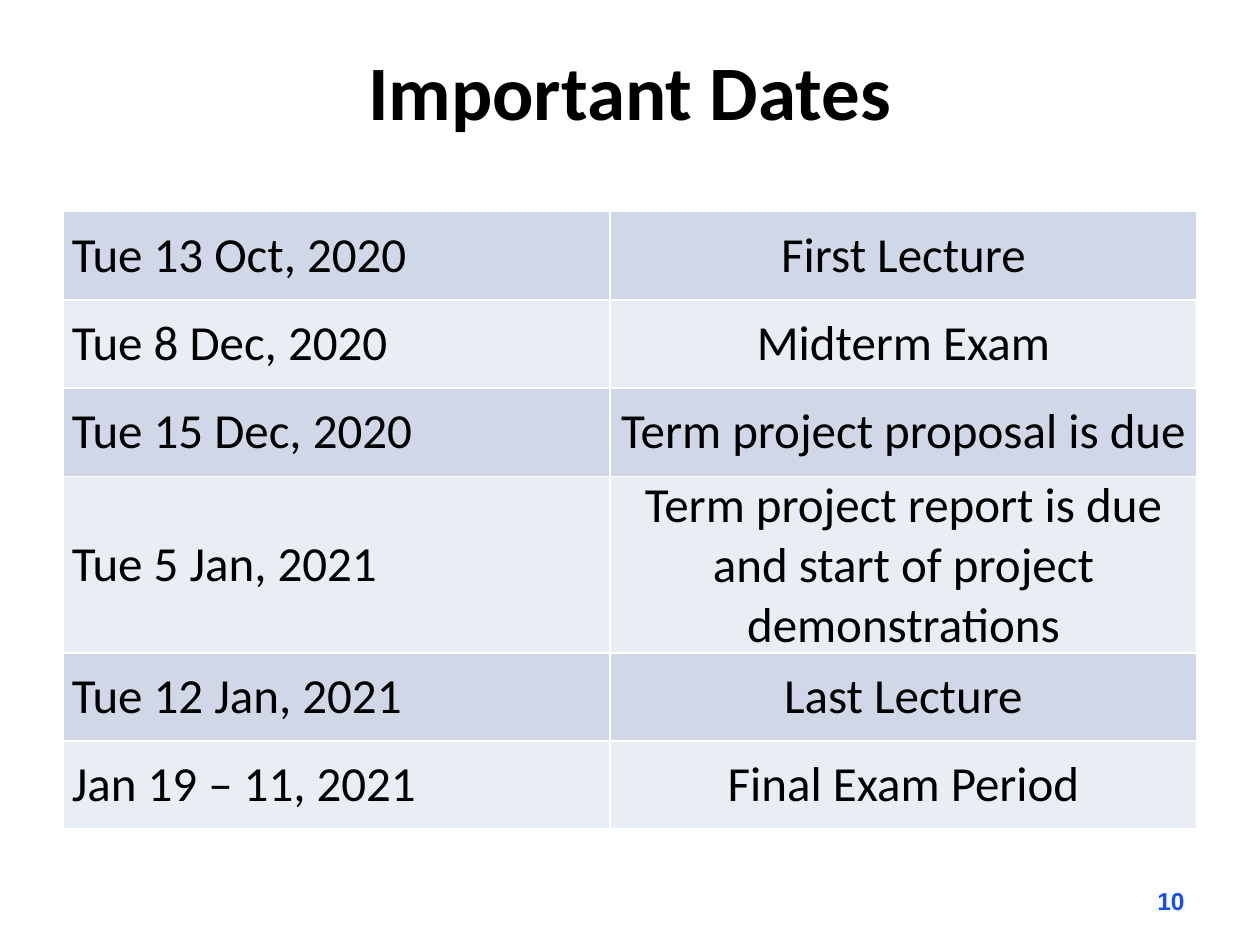
from lxml.etree import SubElement as Sub
from pptx import Presentation
from pptx.dml.color import RGBColor as RGB
from pptx.enum.text import MSO_ANCHOR as Anchor, PP_ALIGN as Align
from pptx.oxml.ns import qn
from pptx.util import Inches, Pt

BLACK = RGB(0x00, 0x00, 0x00)
BLUE = RGB(0x11, 0x4F, 0xFB)
BANDS = (RGB(0xD0, 0xD8, 0xE8), RGB(0xE9, 0xED, 0xF4))
WHITE = RGB(0xFF, 0xFF, 0xFF)

WIDE, HIGH = Inches(10), Inches(7.5)
EDGE = 0.05  # side margin, as a share of the width
COLS = (0.434, 0.466)  # shares of the width
ROW = Inches(0.7)

DATES = (
    ("Tue 13 Oct, 2020", "First Lecture"),
    ("Tue 8 Dec, 2020", "Midterm Exam"),
    ("Tue 15 Dec, 2020", "Term project proposal is due"),
    ("Tue 5 Jan, 2021",
     "Term project report is due and start of project demonstrations"),
    ("Tue 12 Jan, 2021", "Last Lecture"),
    ("Jan 19 – 11, 2021", "Final Exam Period"),
)


def across(share):
    return int(WIDE * share)


def down(share):
    return int(HIGH * share)


def put_text(frame, text, size=28, font="Calibri", color=BLACK,
             bold=False, align=Align.LEFT):
    """Write one formatted paragraph into a text frame."""
    frame.word_wrap = True
    para = frame.paragraphs[0]
    para.alignment = align
    run = para.add_run()
    run.text = text
    run.font.size = Pt(size)
    run.font.name = font
    run.font.bold = bold
    run.font.color.rgb = color


def add_box(slide, text, left, top, width, height, **look):
    box = slide.shapes.add_textbox(
        across(left), down(top), across(width), down(height))
    box.text_frame.vertical_anchor = Anchor.MIDDLE
    put_text(box.text_frame, text, **look)


def add_rules(cell, color=WHITE, width=Pt(1)):
    """Draw a thin line on all four sides of a cell."""
    props = cell._tc.get_or_add_tcPr()
    for side in ("lnL", "lnR", "lnT", "lnB"):
        line = Sub(props, qn(f"a:{side}"), w=str(width))
        fill = Sub(line, qn("a:solidFill"))
        Sub(fill, qn("a:srgbClr"), val=str(color))


def fill_cell(cell, text, band, align):
    cell.vertical_anchor = Anchor.MIDDLE
    cell.margin_left = cell.margin_right = Inches(0.07)
    cell.margin_top = cell.margin_bottom = 0
    add_rules(cell)
    cell.fill.solid()
    cell.fill.fore_color.rgb = band
    put_text(cell.text_frame, text, align=align)


def add_dates(slide, rows, top):
    table = slide.shapes.add_table(
        len(rows), len(COLS), across(EDGE), down(top),
        across(sum(COLS)), ROW * len(rows)).table
    table.first_row = False
    for col, share in zip(table.columns, COLS):
        col.width = across(share)
    for r, row in enumerate(rows):
        for c, (text, align) in enumerate(zip(row, (Align.LEFT, Align.CENTER))):
            fill_cell(table.cell(r, c), text, BANDS[r % 2], align)


def main():
    deck = Presentation()
    deck.slide_width, deck.slide_height = WIDE, HIGH
    slide = deck.slides.add_slide(deck.slide_layouts[6])

    # Title
    add_box(slide, "Important Dates", EDGE, 0.01, 1 - 2 * EDGE, 0.17,
            size=44, bold=True, align=Align.CENTER)

    # Schedule
    add_dates(slide, DATES, top=0.224)

    # Page number
    add_box(slide, "10", 0.717, 0.927, 0.233, 0.053, size=14, font="Arial",
            color=BLUE, bold=True, align=Align.RIGHT)

    deck.save("out.pptx")


if __name__ == "__main__":
    main()
